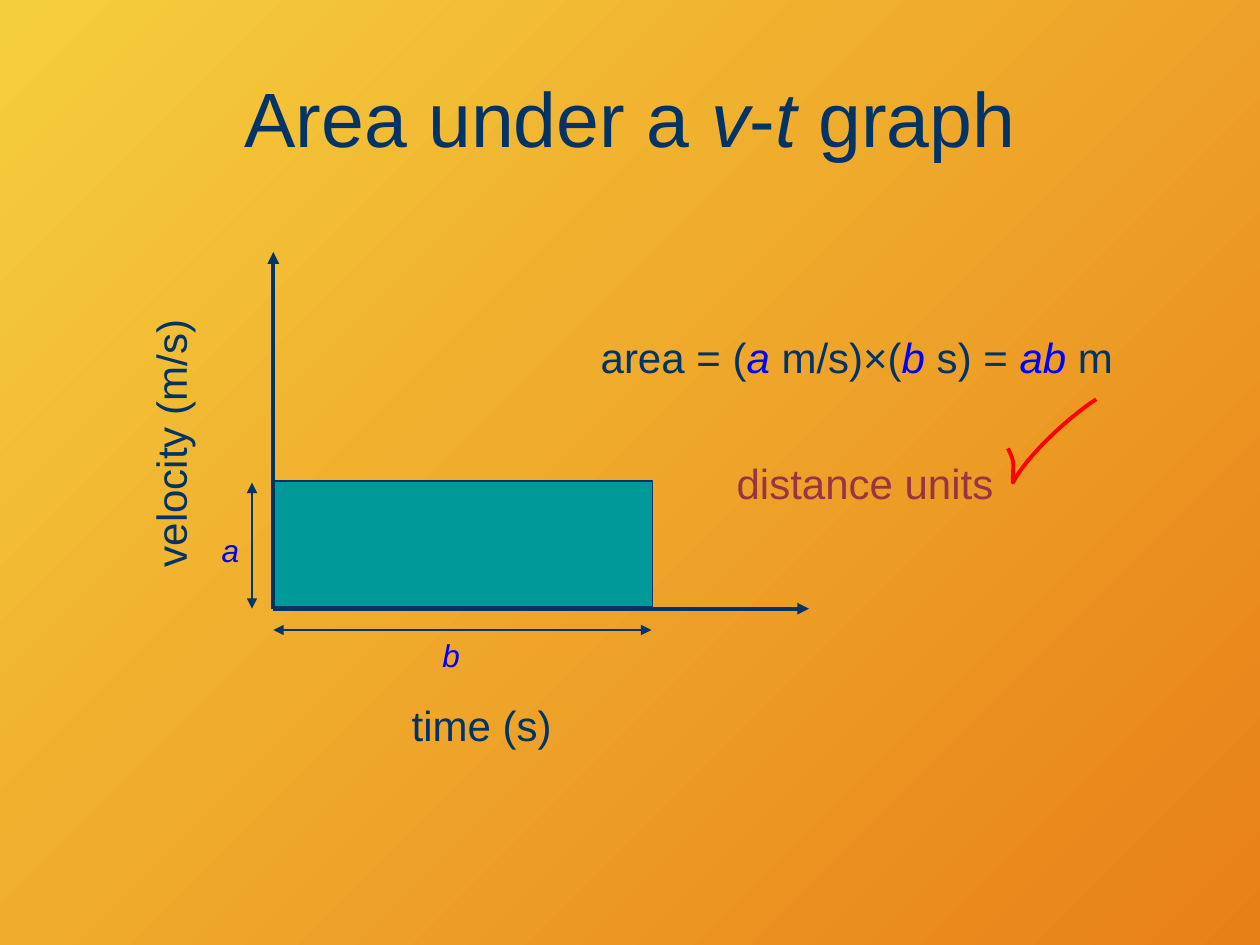
from lxml.etree import SubElement
from pptx import Presentation
from pptx.dml.color import RGBColor
from pptx.enum.shapes import MSO_CONNECTOR, MSO_SHAPE
from pptx.enum.text import MSO_ANCHOR, PP_ALIGN
from pptx.oxml.ns import qn
from pptx.util import Cm, Pt

NAVY = RGBColor(0x00, 0x33, 0x66)
BLUE = RGBColor(0x00, 0x00, 0xFF)
TEAL = RGBColor(0x00, 0x99, 0x99)
WINE = RGBColor(0x9A, 0x33, 0x44)
RED = RGBColor(0xFF, 0x00, 0x00)
GOLD = RGBColor(0xF5, 0xCE, 0x3D)
AMBER = RGBColor(0xE8, 0x80, 0x18)

LEFT, BASE = 5.51, 12.27
WIDE, HIGH = 7.62, 2.54
GAP = 0.43


def place(shape, left, top, width, height):
    shape.left, shape.top = Cm(left), Cm(top)
    shape.width, shape.height = Cm(width), Cm(height)


def paint(slide):
    fill = slide.background.fill
    fill.gradient()
    fill.gradient_angle = 315
    for stop, color, spot in zip(fill.gradient_stops, (GOLD, AMBER), (0, 1)):
        stop.color.rgb = color
        stop.position = spot


def write(frame, parts, size, color=NAVY, align=PP_ALIGN.LEFT, accent=None):
    frame.word_wrap = True
    para = frame.paragraphs[0]
    para.alignment = align
    para.font.name = "Arial"
    para.font.size = Pt(size)
    para.font.color.rgb = color
    for index, part in enumerate(parts):
        run = para.add_run()
        run.text = part
        if index % 2:
            run.font.italic = True
            if accent is not None:
                run.font.color.rgb = accent


def add_title(slide):
    title = slide.shapes.title
    place(title, 1.27, 0.76, 22.86, 3.18)
    title.text_frame.vertical_anchor = MSO_ANCHOR.MIDDLE
    parts = ["Area under a ", "v", "-", "t", " graph"]
    write(title.text_frame, parts, 44, align=PP_ALIGN.CENTER)


def add_label(shapes, parts, left, top, width, color=NAVY, accent=None):
    box = shapes.add_textbox(Cm(left), Cm(top), Cm(width), Cm(1.27))
    write(box.text_frame, parts, 24, color, accent=accent)
    return box


def add_mark(shapes, letter, left, top):
    box = shapes.add_textbox(Cm(left), Cm(top), Cm(1.27), Cm(1.02))
    write(box.text_frame, [letter], 18, BLUE, PP_ALIGN.CENTER)
    box.text_frame.paragraphs[0].font.italic = True


def add_arrow(shapes, start, end, width, heads=("tailEnd",)):
    points = [Cm(value) for value in (*start, *end)]
    line = shapes.add_connector(MSO_CONNECTOR.STRAIGHT, *points)
    line.line.color.rgb = NAVY
    line.line.width = Pt(width)
    edge = line.line._get_or_add_ln()
    for head in heads:
        SubElement(edge, qn("a:" + head), type="triangle")
    SubElement(line._element.spPr, qn("a:effectLst"))


def add_area(shapes):
    size = [Cm(value) for value in (5.54, 9.7, WIDE, HIGH)]
    area = shapes.add_shape(MSO_SHAPE.RECTANGLE, *size)
    area.shadow.inherit = False
    area.fill.solid()
    area.fill.fore_color.rgb = TEAL
    area.line.color.rgb = NAVY
    area.line.width = Pt(0.75)


def curve(nodes, steps=16):
    for step in range(1, steps + 1):
        t = step / steps
        rates = ((1 - t) ** 3, 3 * t * (1 - t) ** 2, 3 * t * t * (1 - t), t ** 3)
        yield tuple(Cm(sum(r * v for r, v in zip(rates, axis)))
                    for axis in zip(*nodes))


def add_tick(shapes):
    start, turn, tip = (20.32, 9.04), (20.42, 9.73), (22.1, 8.05)
    hook = curve([start, (20.47, 9.35), (20.42, 9.32), turn])
    sweep = curve([turn, (20.68, 9.22), (21.51, 8.43), tip])
    pen = shapes.build_freeform(Cm(start[0]), Cm(start[1]))
    pen.add_line_segments([*hook, *sweep], close=False)
    tick = pen.convert_to_shape()
    tick.shadow.inherit = False
    tick.fill.background()
    tick.line.color.rgb = RED
    tick.line.width = Pt(2.25)


def main():
    deck = Presentation()
    deck.slide_width, deck.slide_height = Cm(25.4), Cm(19.05)
    slide = deck.slides.add_slide(deck.slide_layouts[5])
    shapes = slide.shapes
    paint(slide)
    add_title(slide)

    for end in ((LEFT, 5.08), (16.31, BASE)):
        add_arrow(shapes, (LEFT, BASE), end, 2.25)
    speed = add_label(shapes, ["velocity (m/s)"], 0.13, 7.75, 6.6)
    speed.rotation = 270
    add_label(shapes, ["time (s)"], 8.05, 13.97, 4.45)
    add_area(shapes)

    parts = ["area = (", "a", " m/s)×(", "b", " s) = ", "ab", " m"]
    add_label(shapes, parts, 11.86, 6.55, 11, accent=BLUE)
    add_mark(shapes, "a", 4.01, 10.59)
    add_mark(shapes, "b", 8.46, 12.7)
    side, below = LEFT - GAP, BASE + GAP
    both = ("headEnd", "tailEnd")
    add_arrow(shapes, (side, BASE - HIGH), (side, BASE), 1.5, both)
    add_arrow(shapes, (LEFT, below), (LEFT + WIDE, below), 1.5, both)

    group = shapes.add_group_shape()
    add_label(group.shapes, ["distance units"], 14.6, 9.09, 5.92, WINE)
    add_tick(group.shapes)
    deck.save("out.pptx")


if __name__ == "__main__":
    main()
